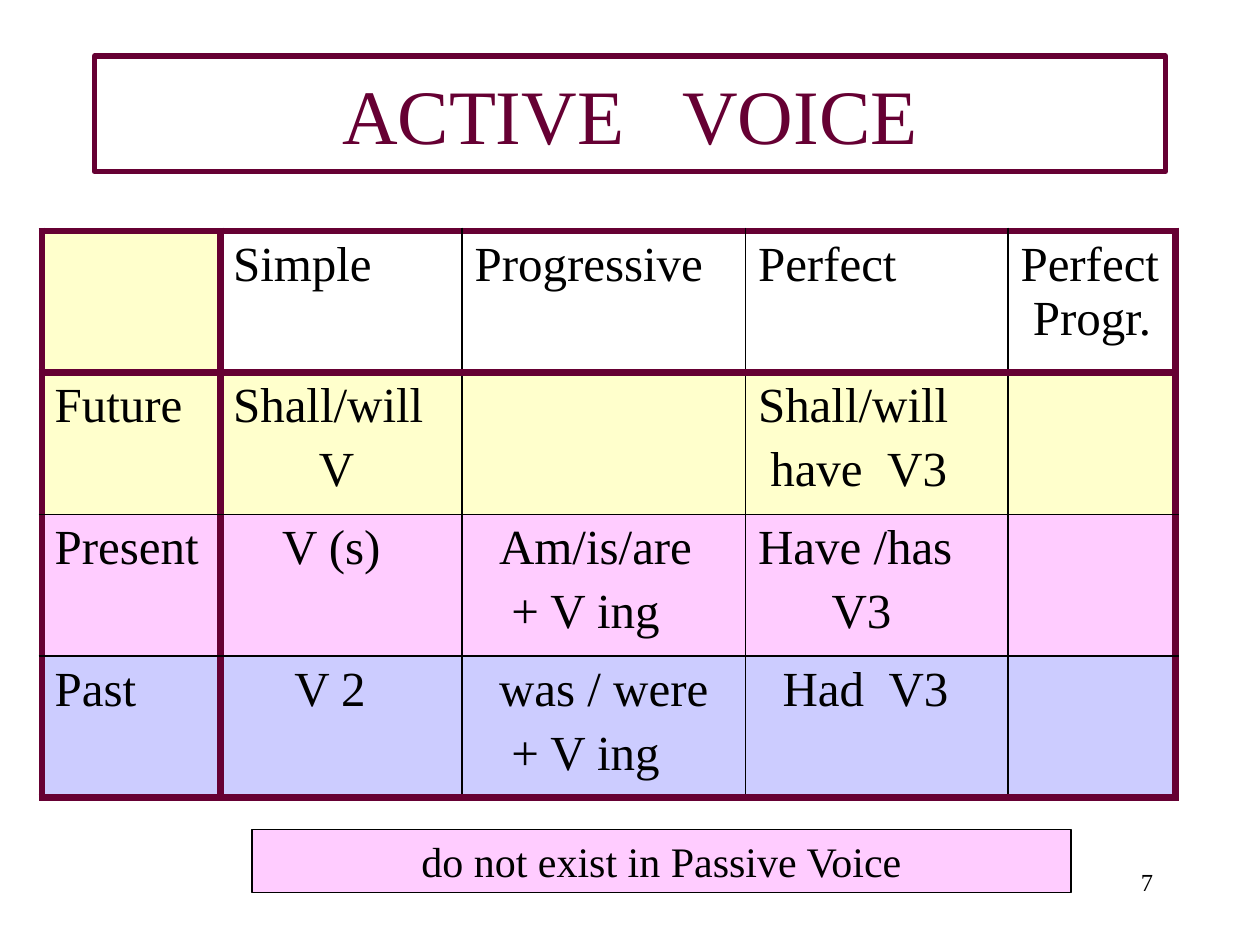
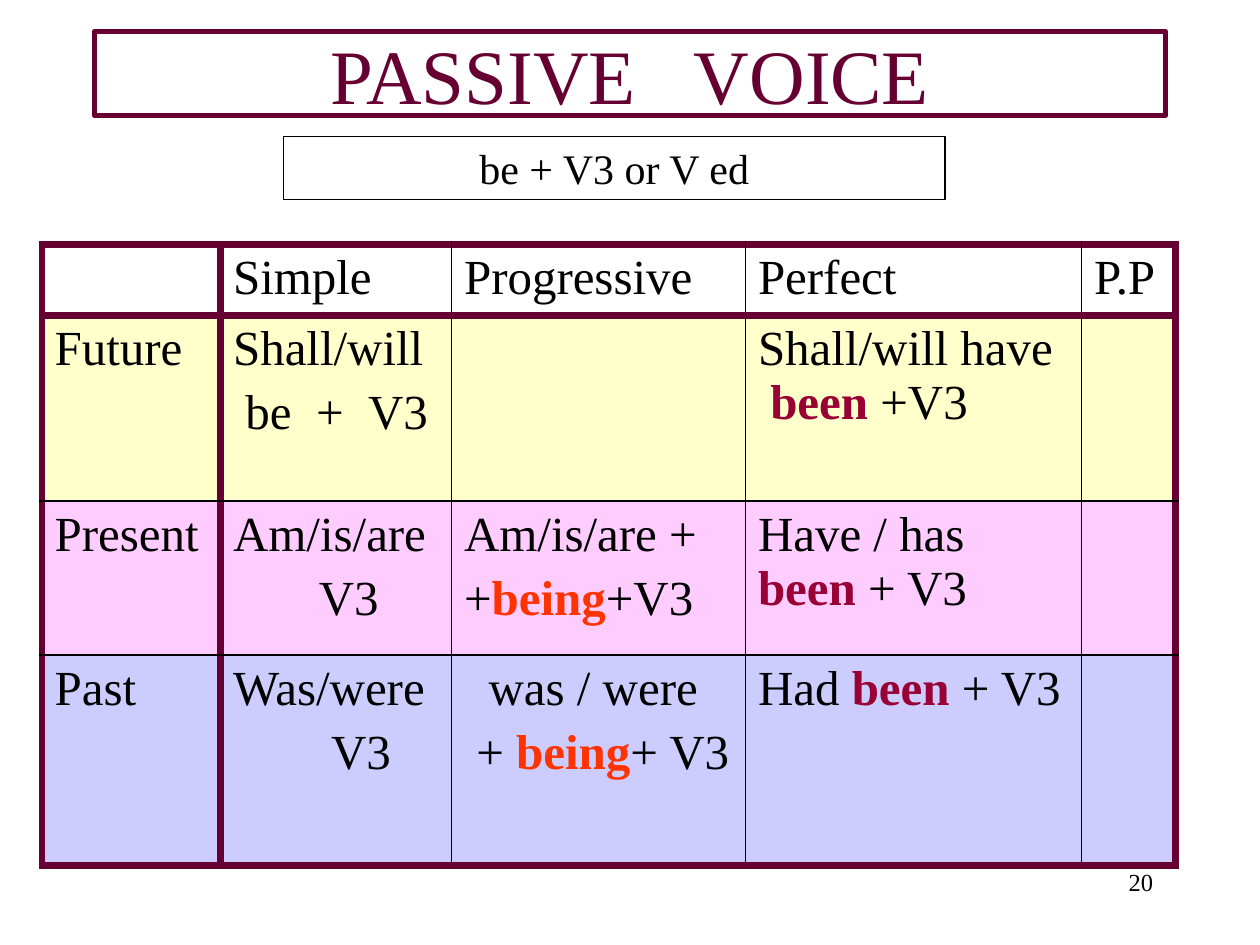
from typing import NamedTuple

from lxml.etree import SubElement
from pptx import Presentation
from pptx.dml.color import RGBColor
from pptx.enum.shapes import MSO_SHAPE
from pptx.enum.text import MSO_ANCHOR, MSO_AUTO_SIZE, PP_ALIGN
from pptx.oxml.ns import qn
from pptx.util import Pt


class Theme:
    font = "Times New Roman"
    plum, black, white = "660033", "000000", "FFFFFF"
    yellow, pink, blue = "FFFFCC", "FFCCFF", "CCCCFF"
    emphasis = {"been": "990033", "being": "FF3300"}
    title_size, cell_size, note_size, number_size = 44, 28, 24, 14
    thick, thin = (plum, 4.5), (black, 1)
    title_line, note_line = (plum, 3), (black, 0.75)
    tense_fills = (yellow, pink, blue)
    paragraph_gap = 5.6


class Line(NamedTuple):
    """One paragraph; left and first are its indents in points."""
    text: str
    left: float = 0
    first: float = 0


def rgb(color):
    return RGBColor.from_string(color)


def write(p, text, size, color, align=PP_ALIGN.LEFT):
    """Write text whose runs are parted by |; a run of ~ is a wide space, one extra space per ~."""
    p.alignment = align
    p.font.name, p.font.size = Theme.font, Pt(size)
    p.font.color.rgb = rgb(color)
    for part in text.split("|"):
        r = p.add_run()
        wide = part.count("~")
        r.text = " " if wide else part
        if wide:
            r.font._element.set("spc", str(wide * size * 25))
        if part in Theme.emphasis:
            r.font.bold = True
            r.font.color.rgb = rgb(Theme.emphasis[part])


def style_box(sp, fill, line):
    color, width = line
    sp.fill.solid()
    sp.fill.fore_color.rgb = rgb(fill)
    sp.line.color.rgb = rgb(color)
    sp.line.width = Pt(width)
    tf = sp.text_frame
    tf.word_wrap = True
    tf.auto_size = MSO_AUTO_SIZE.NONE
    tf.vertical_anchor = MSO_ANCHOR.MIDDLE
    return tf.paragraphs[0]


def add_title(slide, text, top, height):
    sp = slide.shapes.title
    sp.left, sp.top, sp.width, sp.height = Pt(54), Pt(top), Pt(612), Pt(height)
    p = style_box(sp, Theme.white, Theme.title_line)
    write(p, text, Theme.title_size, Theme.plum, PP_ALIGN.CENTER)


def add_note(slide, text, left, top, width, fill):
    sp = slide.shapes.add_shape(MSO_SHAPE.RECTANGLE, Pt(left), Pt(top), Pt(width), Pt(36))
    sp.shadow.inherit = False
    p = style_box(sp, fill, Theme.note_line)
    write(p, text, Theme.note_size, Theme.black, PP_ALIGN.CENTER)


def add_page_number(slide, number):
    tf = slide.shapes.add_textbox(Pt(516), Pt(492), Pt(150), Pt(36)).text_frame
    tf.word_wrap = True
    write(tf.paragraphs[0], str(number), Theme.number_size, Theme.black, PP_ALIGN.RIGHT)


def set_border(cell, side, line):
    color, width = line
    ln = SubElement(cell._tc.get_or_add_tcPr(), qn(f"a:ln{side}"), w=str(Pt(width)))
    SubElement(SubElement(ln, qn("a:solidFill")), qn("a:srgbClr"), val=color)


def fill_cell(cell, lines):
    tf = cell.text_frame
    for i, line in enumerate(lines):
        p = tf.paragraphs[0] if i == 0 else tf.add_paragraph()
        pPr = p._p.get_or_add_pPr()
        pPr.set("marL", str(Pt(line.left)))
        pPr.set("indent", str(Pt(line.first)))
        if i:
            p.space_before = Pt(Theme.paragraph_gap)
        write(p, line.text, Theme.cell_size, Theme.black)


def add_tense_table(slide, top, widths, heights, rows, corner_fill):
    """Add the grid of tenses: heavy frame, heavy rules after the first row and column."""
    frame = slide.shapes.add_table(len(rows), len(widths), Pt(24), Pt(top),
                                   Pt(sum(widths)), Pt(sum(heights)))
    table = frame.table
    table.first_row = table.horz_banding = False
    for column, width in zip(table.columns, widths):
        column.width = Pt(width)
    for row, height in zip(table.rows, heights):
        row.height = Pt(height)

    def rule(edge, count):
        return Theme.thick if edge in (0, 1, count) else Theme.thin

    fills = (Theme.white, *Theme.tense_fills)
    for r, row in enumerate(rows):
        for c, lines in enumerate(row):
            cell = table.cell(r, c)
            fill_cell(cell, lines)
            for side, edge, count in (("L", c, len(widths)), ("R", c + 1, len(widths)),
                                      ("T", r, len(rows)), ("B", r + 1, len(rows))):
                set_border(cell, side, rule(edge, count))
            cell.fill.solid()
            cell.fill.fore_color.rgb = rgb(corner_fill if r == c == 0 else fills[r])


def add_active_voice(slide):
    add_page_number(slide, 7)
    add_title(slide, "ACTIVE|~~|VOICE", 32, 66)
    add_note(slide, "do not exist in Passive Voice", 144, 474, 468, Theme.pink)
    rows = [
        [[], [Line("Simple")], [Line("Progressive")], [Line("Perfect")],
         [Line("Perfect Progr.", 7, -7)]],
        [[Line("Future")], [Line("Shall/will"), Line("V", 49)], [],
         [Line("Shall/will"), Line("have|~|V3", 7)], []],
        [[Line("Present")], [Line("V (s)", 28)],
         [Line("Am/is/are", 14), Line("+ V ing", 21)],
         [Line("Have /has"), Line("V3", 42)], []],
        [[Line("Past")], [Line("V 2", 35)],
         [Line("was / were", 14), Line("+ V ing", 21)], [Line("Had|~|V3", 14)], []],
    ]
    add_tense_table(slide, 132, (102, 138, 162, 150, 96), (81,) * 4, rows, Theme.yellow)


def add_passive_voice(slide):
    add_page_number(slide, 20)
    add_title(slide, "PASSIVE|~~|VOICE", 18, 48)
    rows = [
        [[], [Line("Simple")], [Line("Progressive")], [Line("Perfect")], [Line("P.P")]],
        [[Line("Future")], [Line("Shall/will"), Line("be|~|+|~|V3", 7)], [],
         [Line("Shall/will have |been| +V3", 7, -7)], []],
        [[Line("Present")], [Line("Am/is/are"), Line("V3", 49)],
         [Line("Am/is/are +"), Line("+|being|+V3")],
         [Line("Have / has |been| + V3")], []],
        [[Line("Past")], [Line("Was/were"), Line("V3", 56)],
         [Line("was / were", 14), Line("+ |being|+ V3", 7)],
         [Line("Had |been| + V3")], []],
    ]
    add_tense_table(slide, 139.5, (102, 132, 168, 192, 54), (38.5, 106, 88, 120.5),
                    rows, Theme.white)
    add_note(slide, "be + V3 or V ed", 162, 78, 378, Theme.white)


def main():
    prs = Presentation()
    prs.slide_width, prs.slide_height = Pt(720), Pt(540)
    title_only = prs.slide_layouts[5]
    for build in (add_active_voice, add_passive_voice):
        build(prs.slides.add_slide(title_only))
    prs.save("out.pptx")


if __name__ == "__main__":
    main()
